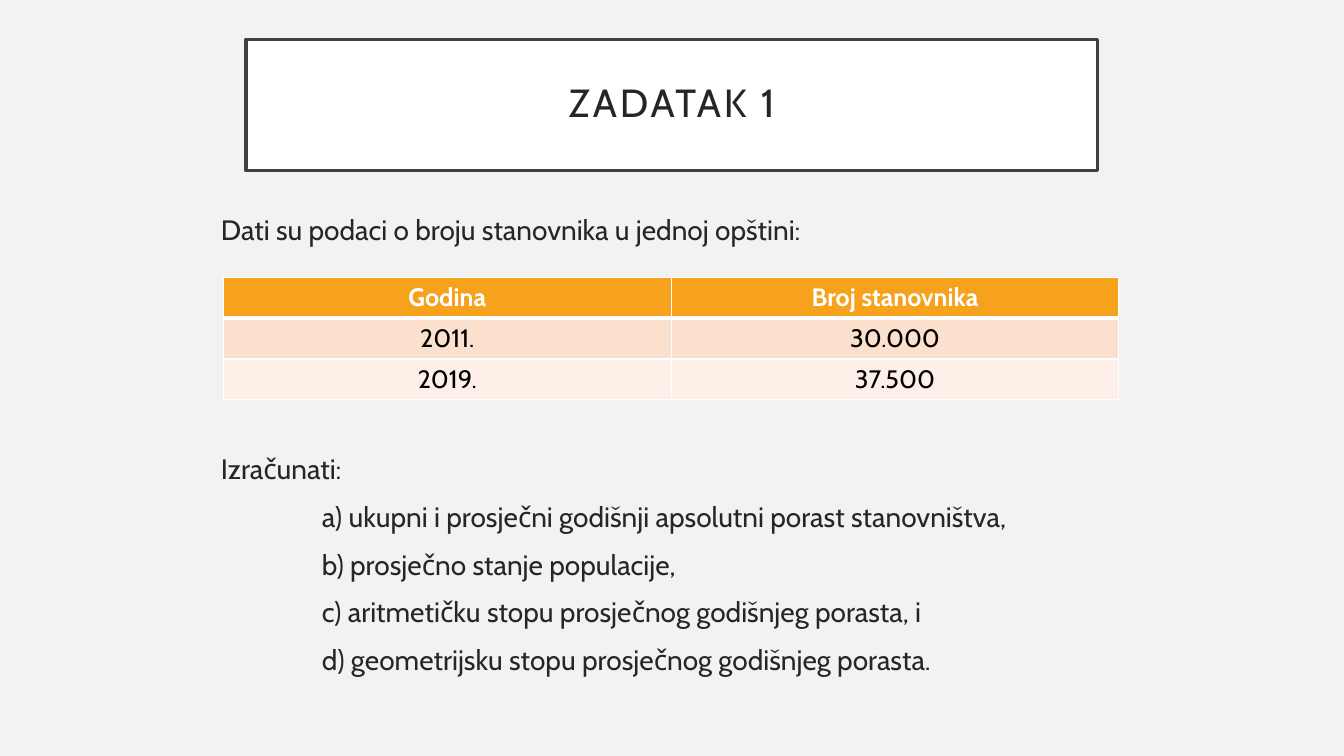
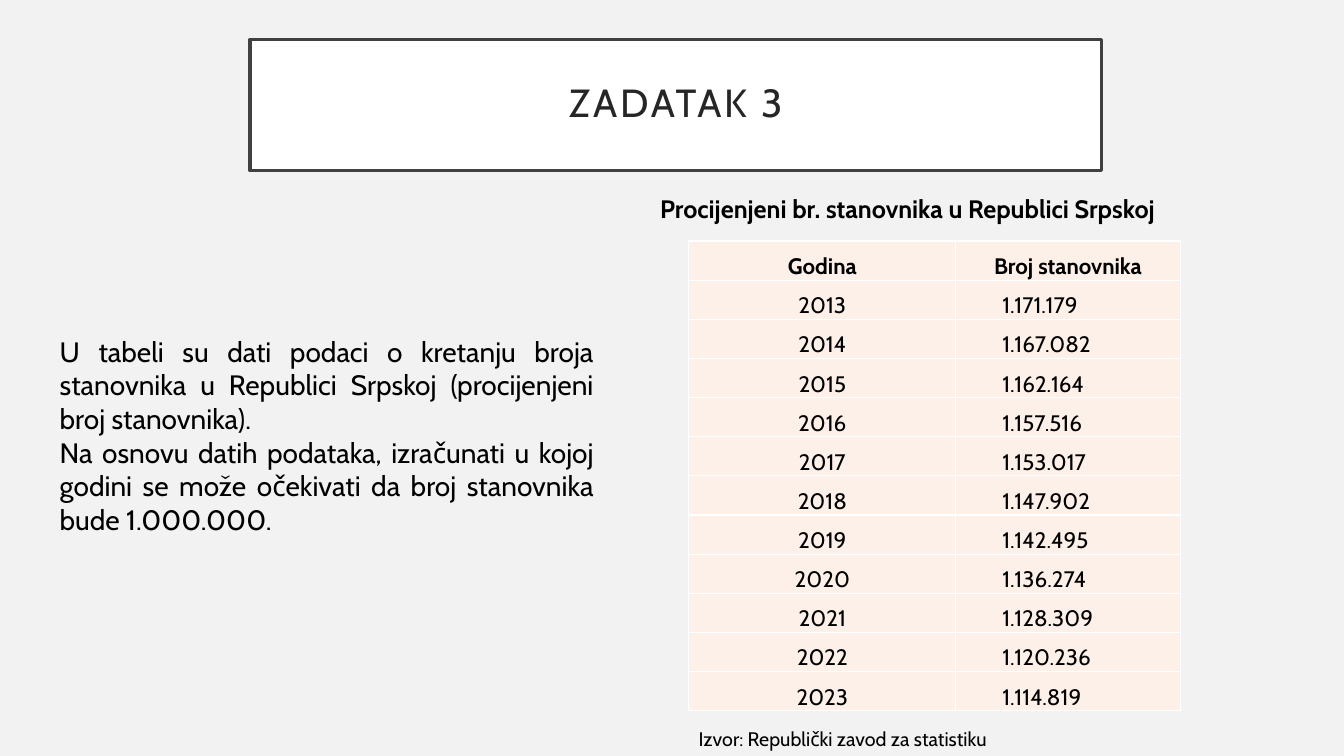
"""Build two exercise slides about population change."""
from lxml.etree import SubElement
from pptx import Presentation
from pptx.dml.color import RGBColor
from pptx.enum.text import MSO_ANCHOR, MSO_AUTO_SIZE, PP_ALIGN
from pptx.oxml.ns import qn
from pptx.util import Inches, Pt

FONT = "Cabin"
BACKGROUND = RGBColor(0xF2, 0xF2, 0xF2)
WHITE = RGBColor(0xFF, 0xFF, 0xFF)
BLACK = RGBColor(0x00, 0x00, 0x00)
INK = RGBColor(0x26, 0x26, 0x26)
FRAME = RGBColor(0x40, 0x40, 0x40)
ORANGE = RGBColor(0xF6, 0xA2, 0x1D)
PEACH = RGBColor(0xFB, 0xE0, 0xCD)
CREAM = RGBColor(0xFD, 0xF0, 0xE8)
LEFT, CENTER, JUSTIFY = PP_ALIGN.LEFT, PP_ALIGN.CENTER, PP_ALIGN.JUSTIFY

COLUMNS, ROWS = 160, 90
deck = Presentation()
deck.slide_width, deck.slide_height = Inches(13.33), Inches(7.5)
deck.slide_master.background.fill.solid()
deck.slide_master.background.fill.fore_color.rgb = BACKGROUND


def grid(column, row, columns, rows):
    """Turn grid columns and rows into left, top, width and height."""
    wide, tall = deck.slide_width / COLUMNS, deck.slide_height / ROWS
    return int(column * wide), int(row * tall), int(columns * wide), int(rows * tall)


def write(para, text, size, color, align=LEFT, bold=False):
    """Add one formatted run to a paragraph."""
    para.alignment = align
    span = para.add_run()
    span.text = text
    span.font.name, span.font.size, span.font.bold = FONT, Pt(size), bold
    span.font.color.rgb = color
    return span


pages = []
for title_text, title_column, body_place in [
    ("ZADATAK 1", 29.28, (25.1, 24.7, 109.8, 58.4)),
    ("ZADATAK 3", 29.76, (5.9, 39.2, 66, 25.4)),
]:
    page = deck.slides.add_slide(deck.slide_layouts[1])
    title = page.shapes.title
    title.left, title.top, title.width, title.height = grid(title_column, 4.7, 101.4, 15.6)
    title.fill.solid()
    title.fill.fore_color.rgb = WHITE
    title.line.color.rgb = FRAME
    title.line.width = Pt(2.5)
    frame = title.text_frame
    frame.auto_size = MSO_AUTO_SIZE.NONE
    frame.vertical_anchor = MSO_ANCHOR.MIDDLE
    frame.margin_left = frame.margin_right = Inches(0.2)
    frame.margin_top = frame.margin_bottom = Inches(0.2)
    frame.paragraphs[0].line_spacing = 0.9
    span = write(frame.paragraphs[0], title_text, 28, INK, CENTER)
    span.font._element.set("spc", "200")
    body = page.placeholders[1]
    body.left, body.top, body.width, body.height = grid(*body_place)
    body.text_frame.auto_size = MSO_AUTO_SIZE.NONE
    pages.append(page)

task_page, trend_page = pages

INDENT, GAP, TABLE_GAP = Inches(1), 10, 147
task_lines = [
    ("Dati su podaci o broju stanovnika u jednoj opštini:", 0, GAP),
    ("Izračunati:", 0, TABLE_GAP),
    ("a) ukupni i prosječni godišnji apsolutni porast stanovništva,", INDENT, GAP),
    ("b) prosječno stanje populacije,", INDENT, GAP),
    ("c) aritmetičku stopu prosječnog godišnjeg porasta, i", INDENT, GAP),
    ("d) geometrijsku stopu prosječnog godišnjeg porasta.", INDENT, GAP),
]
trend_lines = [
    ("U tabeli su dati podaci o kretanju broja stanovnika u Republici Srpskoj "
     "(procijenjeni broj stanovnika).", 0, 0),
    ("Na osnovu datih podataka, izračunati u kojoj godini se može očekivati "
     "da broj stanovnika bude 1.000.000.", 0, 0),
]
for page, lines, color, align in [
    (task_page, task_lines, INK, LEFT),
    (trend_page, trend_lines, BLACK, JUSTIFY),
]:
    frame = page.placeholders[1].text_frame
    for number, (text, indent, gap) in enumerate(lines):
        para = frame.add_paragraph() if number else frame.paragraphs[0]
        para.space_before = Pt(gap)
        write(para, text, 20, color, align)
        properties = para._p.get_or_add_pPr()
        properties.set("marL", str(indent))
        properties.set("indent", "0")
        SubElement(properties, qn("a:buNone"))

for text, place, size, bold in [
    ("Procijenjeni br. stanovnika u Republici Srpskoj", (77.4, 22.4, 70.7, 4.8), 18, True),
    ("Izvor: Republički zavod za statistiku", (82, 85.9, 62.2, 4.1), 14, False),
]:
    box = trend_page.shapes.add_textbox(*grid(*place))
    box.text_frame.word_wrap = True
    write(box.text_frame.paragraphs[0], text, size, BLACK, bold=bold)

header = ("Godina", "Broj stanovnika")
task_data = [header, ("2011.", "30.000"), ("2019.", "37.500")]
populations = [
    "1.171.179", "1.167.082", "1.162.164", "1.157.516", "1.153.017", "1.147.902",
    "1.142.495", "1.136.274", "1.128.309", "1.120.236", "1.114.819",
]
trend_data = [header] + [(str(year), count) for year, count in enumerate(populations, 2013)]

for page, data, corner, widths, height, size, fills, head_color, head_line, compact in [
    (task_page, task_data, (26.6, 33), (53.3, 53.3), 4.85, 18,
     (ORANGE, PEACH, CREAM), WHITE, 3, False),
    (trend_page, trend_data, (82, 28.7), (31.8, 26.7), 4.66, 16,
     (CREAM,) * len(trend_data), BLACK, 1, True),
]:
    place = grid(*corner, sum(widths), height * len(data))
    table = page.shapes.add_table(len(data), len(widths), *place).table
    for column, width in zip(table.columns, widths):
        column.width = grid(0, 0, width, 0)[2]
    for row_number, (values, fill) in enumerate(zip(data, fills)):
        is_header = row_number == 0
        for column_number, value in enumerate(values):
            cell = table.cell(row_number, column_number)
            indented = compact and column_number == 1 and not is_header
            if compact:
                cell.vertical_anchor = MSO_ANCHOR.BOTTOM
                cell.margin_left = Inches(0.46 if indented else 0.01)
                cell.margin_right = cell.margin_top = Inches(0.01)
                cell.margin_bottom = 0
            write(cell.text_frame.paragraphs[0], value, size,
                  head_color if is_header else BLACK,
                  LEFT if indented else CENTER, is_header)
            borders = {
                "a:lnL": 1,
                "a:lnR": 1,
                "a:lnT": head_line if row_number == 1 else 1,
                "a:lnB": head_line if is_header else 1,
            }
            properties = cell._tc.get_or_add_tcPr()
            for side, weight in borders.items():
                line = SubElement(properties, qn(side), w=str(Pt(weight)))
                paint = SubElement(line, qn("a:solidFill"))
                SubElement(paint, qn("a:srgbClr"), val=str(WHITE))
            cell.fill.solid()
            cell.fill.fore_color.rgb = fill

deck.save("out.pptx")
